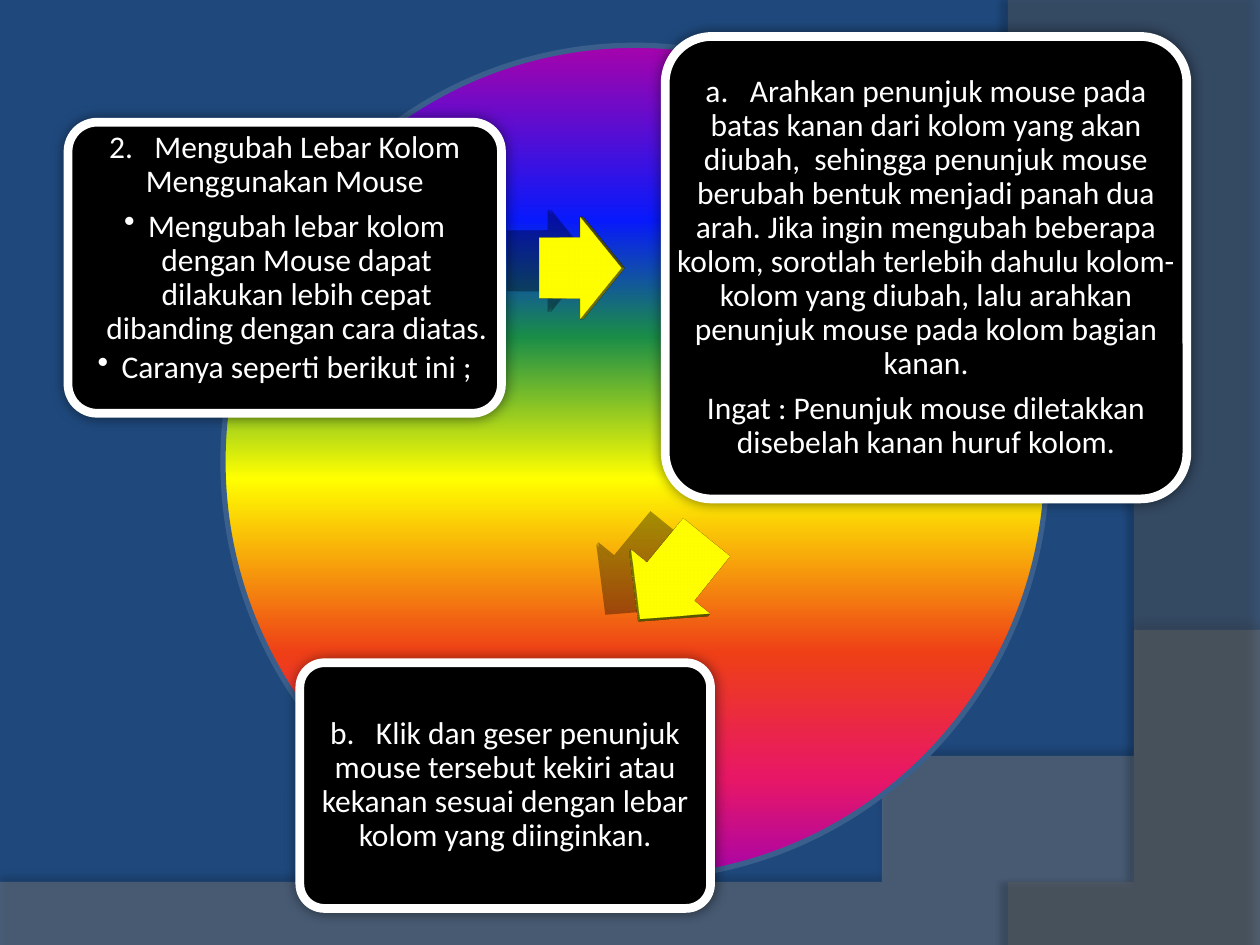
from lxml.etree import SubElement
from pptx import Presentation
from pptx.dml.color import RGBColor as Color
from pptx.enum.shapes import MSO_SHAPE as Preset
from pptx.enum.text import MSO_ANCHOR as Anchor, PP_ALIGN as Align
from pptx.oxml.ns import qn
from pptx.util import Inches, Pt

THEME = {
    "background": "1F497D", "box": "000000", "border": "FFFFFF", "text": "FFFFFF",
    "arrow": "FFFF00", "ring": "3A5F8C", "font": "Calibri", "size": 18,
    "rainbow": [(0, "A603AB"), (21, "0819FB"), (35, "1A8D48"), (52, "FFFF00"),
                (73, "EE3F17"), (88, "E81766"), (100, "A603AB")],
}
# Shadows: opacity %, blur pt, distance pt, direction in degrees
BOX_SHADOW = (50, 7.5, 0, 0)
ARROW_SHADOW = (18, 14.5, 19, 192)

# Waves: corner points, and cubic curves as (control, control, end)
WAVES = [
    {"path": [(0, 7.05), (0, 7.51), (10, 7.51), (10, 5.2),
              ((5.59, 7.29), (3.91, 7.19), (0, 7.05))],
     "color": "7F7F7F", "opacity": 45, "shadow": (35, 4, 3.5, 270)},
    {"path": [(10, 0.02), (10, 7.5), (8.21, 7.5), ((9.35, 6.19), (10.18, 3), (8, 0))],
     "color": "5E5E5E", "opacity": 40, "shadow": (45, 4, 4, 180)},
]
CIRCLE = (1.77, 0.36, 6.54, 6.61)
STEPS = [
    {"at": (0.54, 0.97, 3.44, 2.31), "anchor": Anchor.TOP,
     "text": ["2.   Mengubah Lebar Kolom Menggunakan Mouse"],
     "bullets": ["Mengubah lebar kolom dengan Mouse dapat dilakukan lebih cepat "
                 "dibanding dengan cara diatas.",
                 "Caranya seperti berikut ini ;"]},
    {"at": (5.28, 0.29, 4.14, 3.67), "anchor": Anchor.MIDDLE,
     "text": ["a.   Arahkan penunjuk mouse pada batas kanan dari kolom yang akan diubah,  "
              "sehingga penunjuk mouse berubah bentuk menjadi panah dua arah. Jika ingin "
              "mengubah beberapa kolom, sorotlah terlebih dahulu kolom-kolom yang diubah, "
              "lalu arahkan penunjuk mouse pada kolom bagian kanan.",
              "Ingat : Penunjuk mouse diletakkan disebelah kanan huruf kolom."]},
    {"at": (2.38, 5.26, 3.26, 1.95), "anchor": Anchor.MIDDLE,
     "text": ["b.   Klik dan geser penunjuk mouse tersebut kekiri atau kekanan sesuai "
              "dengan lebar kolom yang diinginkan."]},
]
ARROWS = [((4.26, 1.72, 0.69, 0.81), 0), ((4.9, 4.18, 0.89, 0.81), 129.1)]


def add_xml(parent, tag, **values):
    return SubElement(parent, qn(tag), {key: str(value) for key, value in values.items()})


def add_color(parent, color, opacity=100):
    node = add_xml(parent, "a:srgbClr", val=color)
    if opacity < 100:
        add_xml(node, "a:alpha", val=opacity * 1000)


def add_shadow(shape, opacity, blur, distance, direction):
    shape.shadow.inherit = False
    effects = shape._element.spPr.find(qn("a:effectLst"))
    shadow = add_xml(effects, "a:outerShdw", blurRad=Pt(blur), dist=Pt(distance),
                     dir=direction * 60000, algn="ctr", rotWithShape=0)
    add_color(shadow, "000000", opacity)


def paint(shape, fill, line=None, width=0):
    shape.fill.solid()
    shape.fill.fore_color.rgb = Color.from_string(fill)
    if line:
        shape.line.color.rgb = Color.from_string(line)
        shape.line.width = Pt(width)
    else:
        shape.line.fill.background()


def add_preset(page, preset, at, adjustments=()):
    shape = page.shapes.add_shape(preset, *map(Inches, at))
    for index, value in enumerate(adjustments):
        shape.adjustments[index] = value
    return shape


def trace(path, steps=40):
    """Turn corners and cubic curves into one list of points."""
    points = []
    for part in path:
        if not isinstance(part[0], tuple):
            points.append(part)
            continue
        curve = (points[-1], *part)
        for step in range(1, steps + 1):
            t = step / steps
            weights = ((1 - t) ** 3, 3 * t * (1 - t) ** 2, 3 * t ** 2 * (1 - t), t ** 3)
            points.append(tuple(sum(w * point[axis] for w, point in zip(weights, curve))
                                for axis in (0, 1)))
    return points


def add_wave(page, path, color, opacity, shadow):
    start, *rest = trace(path)
    builder = page.shapes.build_freeform(*start, scale=Inches(1))
    builder.add_line_segments(rest, close=True)
    wave = builder.convert_to_shape()
    paint(wave, color)
    solid = wave._element.spPr.find(qn("a:solidFill"))
    add_xml(solid[0], "a:alpha", val=opacity * 1000)
    add_shadow(wave, *shadow)


def add_circle(page):
    circle = add_preset(page, Preset.OVAL, CIRCLE)
    circle.shadow.inherit = False
    paint(circle, THEME["background"], THEME["ring"], 3)
    circle.fill.gradient()
    circle.fill.gradient_angle = 270
    stops = circle._element.spPr.find(qn("a:gradFill")).find(qn("a:gsLst"))
    for stop in list(stops):
        stops.remove(stop)
    for position, color in THEME["rainbow"]:
        add_color(add_xml(stops, "a:gs", pos=position * 1000), color)


def add_paragraph(para, text, bullet):
    para.text = text
    layout = {"alignment": Align.CENTER, "line_spacing": 0.9,
              "space_after": Pt(THEME["size"] * (0.15 if bullet else 0.35))}
    for name, value in layout.items():
        setattr(para, name, value)
    span = para.runs[0].font
    for name, value in {"name": THEME["font"], "size": Pt(THEME["size"])}.items():
        setattr(span, name, value)
    span.color.rgb = Color.from_string(THEME["text"])
    if bullet:
        para.level = 1
        properties = para._p.get_or_add_pPr()
        properties.set("marL", str(Inches(0.19)))
        properties.set("indent", str(Inches(-0.19)))
        add_xml(properties, "a:buChar", char="•")


def add_step(page, at, anchor, text, bullets=()):
    box = add_preset(page, Preset.ROUNDED_RECTANGLE, at, [0.1])
    paint(box, THEME["box"], THEME["border"], 5)
    add_shadow(box, *BOX_SHADOW)
    frame = page.shapes.add_textbox(*map(Inches, at)).text_frame
    frame.word_wrap = True
    frame.vertical_anchor = anchor
    for side in ("left", "top", "right", "bottom"):
        setattr(frame, f"margin_{side}", Inches(0.07))
    lines = [(line, False) for line in text] + [(line, True) for line in bullets]
    for index, (line, bullet) in enumerate(lines):
        para = frame.add_paragraph() if index else frame.paragraphs[0]
        add_paragraph(para, line, bullet)


def add_arrow(page, at, rotation):
    arrow = add_preset(page, Preset.RIGHT_ARROW, at, [0.6, 0.5])
    arrow.rotation = rotation
    paint(arrow, THEME["arrow"])
    add_shadow(arrow, *ARROW_SHADOW)
    properties = arrow._element.spPr
    scene = add_xml(properties, "a:scene3d")
    add_xml(scene, "a:camera", prst="perspectiveLeft", zoom=91000)
    add_xml(scene, "a:lightRig", rig="threePt", dir="t")
    add_xml(properties, "a:sp3d", extrusionH=Pt(6), prstMaterial="matte")


def main():
    deck = Presentation()
    deck.slide_width, deck.slide_height = Inches(10), Inches(7.5)
    page = deck.slides.add_slide(deck.slide_layouts[6])
    page.background.fill.solid()
    page.background.fill.fore_color.rgb = Color.from_string(THEME["background"])
    for wave in WAVES:
        add_wave(page, **wave)
    add_circle(page)
    for step in STEPS:
        add_step(page, **step)
    for at, rotation in ARROWS:
        add_arrow(page, at, rotation)
    deck.save("out.pptx")


if __name__ == "__main__":
    main()
